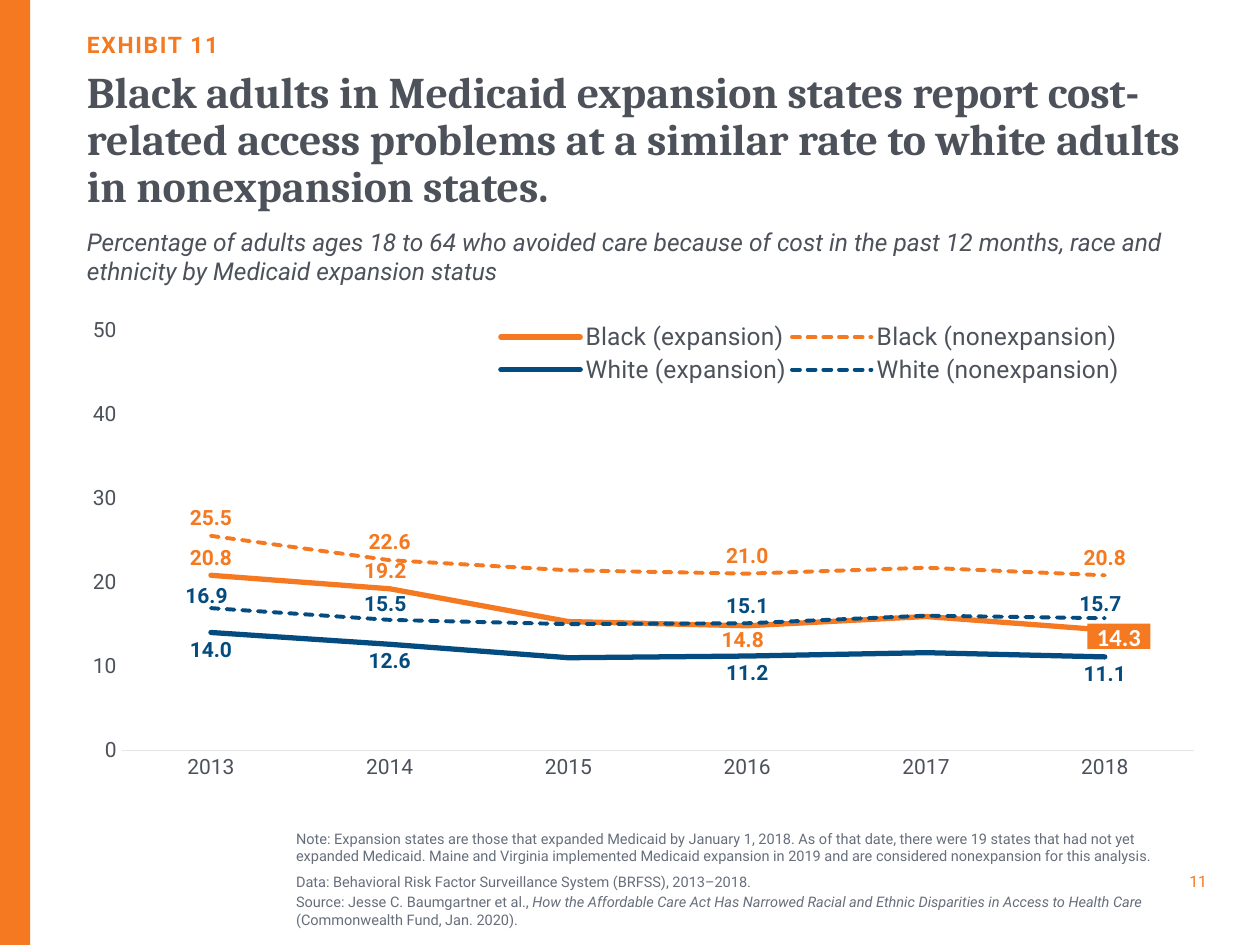
from dataclasses import dataclass, field

from lxml import etree
from pptx import Presentation
from pptx import util as u
from pptx.chart import data as chart_data
from pptx.dml.color import RGBColor
from pptx.enum import chart as ch
from pptx.enum import dml, shapes, text
from pptx.oxml import ns

Pt = u.Pt


@dataclass(frozen=True)
class Theme:
    orange: RGBColor = RGBColor(0xF4, 0x79, 0x20)
    blue: RGBColor = RGBColor(0x04, 0x4C, 0x7F)
    ink: RGBColor = RGBColor(0x4C, 0x51, 0x5A)
    gray: RGBColor = RGBColor(0x67, 0x6E, 0x7B)
    rule: RGBColor = RGBColor(0xE3, 0xE5, 0xE7)
    white: RGBColor = RGBColor(0xFF, 0xFF, 0xFF)
    body: str = "Roboto"
    heading: str = "Cambria"
    badge: str = "Calibri"
    title_size: float = 25
    text_size: float = 14
    exhibit_size: float = 13
    chart_size: float = 12
    page_size: float = 9
    note_size: float = 8.3


@dataclass(frozen=True)
class Box:
    left: float
    top: float
    width: float
    height: float

    def points(self) -> tuple:
        return tuple(Pt(v) for v in (self.left, self.top, self.width, self.height))


@dataclass(frozen=True)
class Trend:
    name: str
    values: tuple
    color: RGBColor
    dashed: bool
    label_side: ch.XL_LABEL_POSITION
    # year index -> (side, shift right, shift down), as shares of the chart
    moved: dict = field(default_factory=dict)
    unlabeled: tuple = (2, 4)


THEME = Theme()
ABOVE, BELOW = ch.XL_LABEL_POSITION.ABOVE, ch.XL_LABEL_POSITION.BELOW
YEARS = ("2013", "2014", "2015", "2016", "2017", "2018")
TRENDS = (
    Trend("Black (expansion)", (20.8, 19.2, 15.3, 14.8, 15.9, 14.3), THEME.orange, False, ABOVE,
          {1: (ABOVE, -0.004, 0), 3: (BELOW, -0.004, -0.006)}, (2, 4, 5)),
    Trend("Black (nonexpansion)", (25.5, 22.6, 21.4, 21, 21.7, 20.8), THEME.orange, True, ABOVE),
    Trend("White (expansion)", (14, 12.6, 11, 11.2, 11.6, 11.1), THEME.blue, False, BELOW),
    Trend("White (nonexpansion)", (16.9, 15.5, 15, 15.1, 16, 15.7), THEME.blue, True, ABOVE,
          {0: (ABOVE, -0.004, 0.012), 1: (ABOVE, -0.004, 0.004), 5: (ABOVE, -0.004, 0.008)}),
)


def style(font, size: float, color: RGBColor, name: str = THEME.body,
          bold: bool = False, italic: bool = False) -> None:
    font.size, font.name, font.bold, font.italic = Pt(size), name, bold, italic
    font.color.rgb = color


def prepare(frame, anchor, wrap: bool = True) -> None:
    frame.margin_left = frame.margin_right = frame.margin_top = frame.margin_bottom = 0
    frame.auto_size = text.MSO_AUTO_SIZE.NONE
    frame.vertical_anchor, frame.word_wrap = anchor, wrap


def add_text(slide, box: Box, words: str, anchor=text.MSO_ANCHOR.MIDDLE, wrap: bool = True):
    frame = slide.shapes.add_textbox(*box.points()).text_frame
    prepare(frame, anchor, wrap)
    frame.text = words
    return frame


def add_block(slide, box: Box):
    block = slide.shapes.add_shape(shapes.MSO_SHAPE.RECTANGLE, *box.points())
    block.shadow.inherit = False
    block.fill.solid()
    block.fill.fore_color.rgb = THEME.orange
    block.line.fill.background()
    return block


def place(parent, index: int, **sizes) -> None:
    """Insert a manual chart layout as the child at the given index."""
    for old in parent.findall(ns.qn("c:layout")):
        parent.remove(old)
    layout = etree.Element(ns.qn("c:layout"))
    manual = etree.SubElement(layout, ns.qn("c:manualLayout"))
    for tag, value in sizes.items():
        etree.SubElement(manual, ns.qn(f"c:{tag}")).set("val", str(value))
    parent.insert(index, layout)


def format_trend(series, trend: Trend) -> None:
    series.smooth = False
    series.marker.style = ch.XL_MARKER_STYLE.NONE
    line = series.format.line
    line.color.rgb = trend.color
    line.width = Pt(2.25 if trend.dashed else 3)
    if trend.dashed:
        line.dash_style = dml.MSO_LINE.SQUARE_DOT
    series._element.find(".//" + ns.qn("a:ln")).set("cap", "rnd")

    labels = series.data_labels
    labels.show_value, labels.position = True, trend.label_side
    labels.number_format, labels.number_format_is_linked = "0.0", False
    style(labels.font, THEME.chart_size, trend.color, bold=True)

    for year, (side, right, down) in trend.moved.items():
        label = series.points[year].data_label
        style(label.font, THEME.chart_size, trend.color, bold=True)
        label.position = side
        place(label_element(series, year), 1, x=right, y=down)
    for year in trend.unlabeled:
        series.points[year].data_label.position = trend.label_side
        element = label_element(series, year)
        for child in list(element)[1:]:
            element.remove(child)
        etree.SubElement(element, ns.qn("c:delete")).set("val", "1")


def label_element(series, year: int):
    return series._element.xpath(f"c:dLbls/c:dLbl[c:idx/@val='{year}']")[0]


def add_trend_chart(slide, box: Box) -> None:
    data = chart_data.CategoryChartData(number_format="0.0")
    data.categories = YEARS
    for trend in TRENDS:
        data.add_series(trend.name, trend.values)
    chart = slide.shapes.add_chart(ch.XL_CHART_TYPE.LINE, *box.points(), data).chart
    chart.has_title = False
    style(chart.font, THEME.chart_size, THEME.ink)
    chart.plots[0].vary_by_categories = False
    for series, trend in zip(chart.plots[0].series, TRENDS):
        format_trend(series, trend)

    # Axes
    years, percent = chart.category_axis, chart.value_axis
    for axis in (years, percent):
        axis.has_major_gridlines = False
        axis.major_tick_mark = axis.minor_tick_mark = ch.XL_TICK_MARK.NONE
        style(axis.tick_labels.font, THEME.chart_size, THEME.ink)
    years.format.line.color.rgb = THEME.rule
    years.format.line.width = Pt(0.75)
    percent.format.line.fill.background()
    percent.minimum_scale, percent.maximum_scale, percent.major_unit = 0, 50, 10
    percent.tick_labels.number_format = "0"
    percent.tick_labels.number_format_is_linked = False

    # Legend and plot positions
    chart.has_legend = True
    legend = chart.legend
    legend.position, legend.include_in_layout = ch.XL_LEGEND_POSITION.BOTTOM, False
    style(legend.font, THEME.text_size, THEME.ink)
    place(legend._element, 1, xMode="edge", yMode="edge", x=0.366, y=0.01, w=0.565, h=0.14)
    place(chart._chartSpace.find(".//" + ns.qn("c:plotArea")), 0, layoutTarget="inner",
          xMode="edge", yMode="edge", x=0.031, y=0.031, w=0.962, h=0.876)


def add_notes(slide, box: Box) -> None:
    notes = add_text(slide, box, "\n".join((
        "Note: Expansion states are those that expanded Medicaid by January 1, 2018. As of that "
        "date, there were 19 states that had not yet expanded Medicaid. Maine and Virginia "
        "implemented Medicaid expansion in 2019 and are considered nonexpansion for this analysis.",
        "Data: Behavioral Risk Factor Surveillance System (BRFSS), 2013–2018.",
        "Source: Jesse C. Baumgartner et al., ")))
    note, _, source = notes.paragraphs
    report = source.add_run()
    report.text = ("How the Affordable Care Act Has Narrowed Racial and Ethnic Disparities "
                   "in Access to Health Care ")
    report.font.italic = True
    source.add_run().text = "(Commonwealth Fund, Jan. 2020)."
    for paragraph in notes.paragraphs:
        style(paragraph.font, THEME.note_size, THEME.gray)
        paragraph.space_before = Pt(0 if paragraph is note else 1.7)
    note.space_after = Pt(3)


def main() -> None:
    deck = Presentation()
    deck.slide_width, deck.slide_height = Pt(720), Pt(540)
    slide = deck.slides.add_slide(deck.slide_layouts[5])
    margin, column = 49.7, 637.2

    # Side band and page number
    add_block(slide, Box(0, 0, 17.3, 540))
    page = add_text(slide, Box(667.4, 495.4, 22.3, 15.8), "11", wrap=False).paragraphs[0]
    page.alignment = text.PP_ALIGN.RIGHT
    style(page.font, THEME.page_size, THEME.orange)

    # Heading
    exhibit = add_text(slide, Box(margin, 13.7, column, 19.4), "EXHIBIT 11",
                       text.MSO_ANCHOR.BOTTOM).paragraphs[0]
    style(exhibit.font, THEME.exhibit_size, THEME.orange, bold=True)
    exhibit.runs[0]._r.get_or_add_rPr().set("spc", "100")

    title = slide.shapes.title
    title.left, title.top, title.width, title.height = Box(margin, 40.3, column, 93.6).points()
    prepare(title.text_frame, text.MSO_ANCHOR.TOP)
    title.text_frame.text = ("Black adults in Medicaid expansion states report cost-related access "
                             "problems at a similar rate to white adults in nonexpansion states.")
    headline = title.text_frame.paragraphs[0]
    headline.alignment, headline.line_spacing = text.PP_ALIGN.LEFT, 0.9
    style(headline.font, THEME.title_size, THEME.ink, THEME.heading, bold=True)

    subtitle = add_text(slide, Box(margin, 129.6, 660.2, 33.8),
                        "Percentage of adults ages 18 to 64 who avoided care because of cost in the "
                        "past 12 months, race and ethnicity by Medicaid expansion status")
    style(subtitle.paragraphs[0].font, THEME.text_size, THEME.ink, italic=True)

    # Chart with its highlighted last value
    add_trend_chart(slide, Box(margin, 180, column, 274.3))
    highlight = add_block(slide, Box(621.4, 356.4, 36, 14.4)).text_frame
    prepare(highlight, text.MSO_ANCHOR.MIDDLE)
    highlight.text = "14.3"
    highlight.paragraphs[0].alignment = text.PP_ALIGN.CENTER
    style(highlight.paragraphs[0].font, THEME.text_size, THEME.white, THEME.badge, bold=True)

    add_notes(slide, Box(169.2, 471.6, 498.2, 61.2))
    deck.save("out.pptx")


if __name__ == "__main__":
    main()
